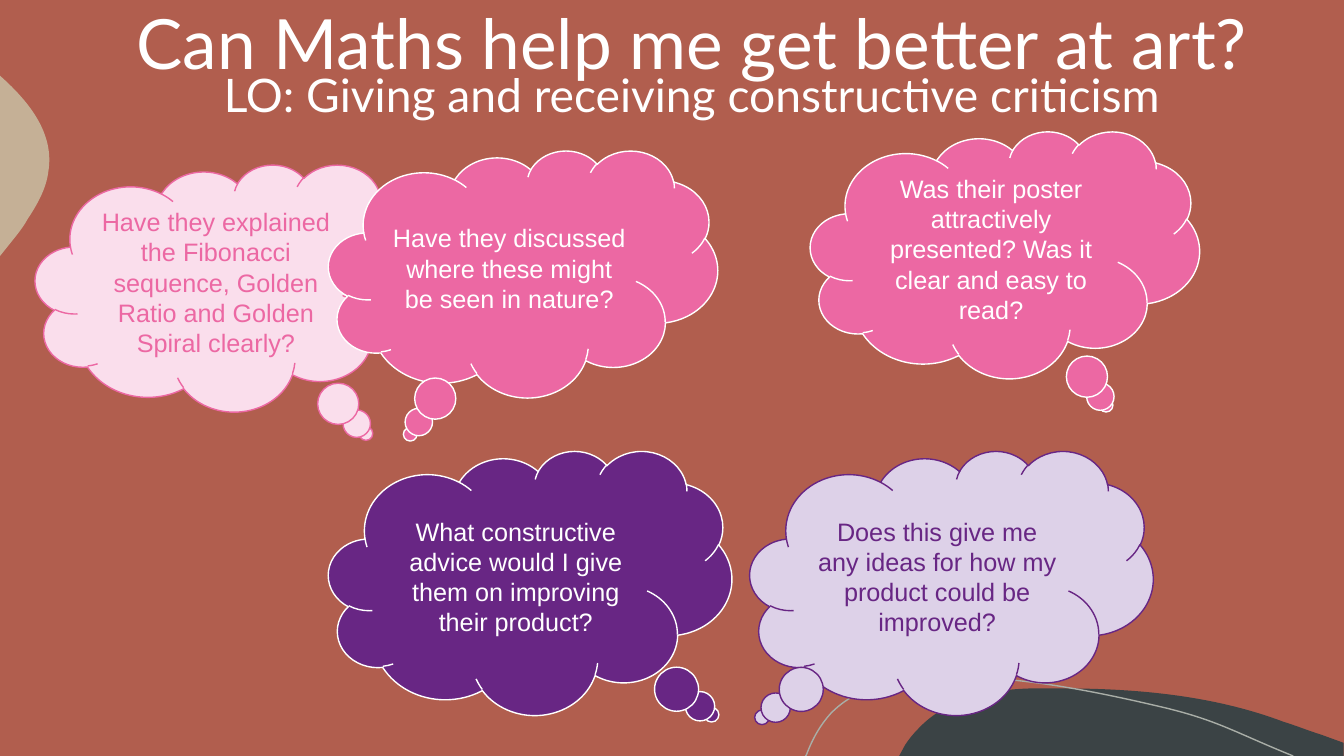
from dataclasses import dataclass

from lxml import etree
from pptx import Presentation
from pptx.dml.color import RGBColor
from pptx.enum.shapes import MSO_SHAPE
from pptx.enum.text import MSO_ANCHOR, MSO_AUTO_SIZE, PP_ALIGN
from pptx.oxml.ns import qn
from pptx.slide import Slide
from pptx.util import Inches, Pt

CLOUD = MSO_SHAPE.CLOUD_CALLOUT
MIDDLE, BOTTOM = MSO_ANCHOR.MIDDLE, MSO_ANCHOR.BOTTOM
NO_AUTOFIT = MSO_AUTO_SIZE.NONE
CENTER = PP_ALIGN.CENTER

COLUMNS, ROWS = 40 / 3, 7.5

Point = tuple[float, float]
Segment = tuple[Point, ...]


@dataclass(frozen=True)
class Theme:
    background: str = "B15E4E"
    slate: str = "3B4345"
    sand: str = "C5B096"
    grey: str = "A9AEA7"
    white: str = "FFFFFF"
    pink: str = "EC68A3"
    pale_pink: str = "FADEEC"
    purple: str = "682684"
    pale_purple: str = "DDD1E8"
    heading_font: str = "Lato"
    body_font: str = "Arial"
    heading_size: float = 49.5
    objective_size: float = 33
    question_size: float = 18
    line_width: float = 1


THEME = Theme()


@dataclass(frozen=True)
class CloudSize:
    columns: float
    rows: float


@dataclass(frozen=True)
class Question:
    text: str
    column: float
    row: float
    size: CloudSize
    tail: Point
    fill: str
    ink: str


@dataclass(frozen=True)
class Swirl:
    start: Point
    segments: tuple[Segment, ...]
    fill: str | None = None
    line: str | None = None


UPPER, LOWER = CloudSize(3.86, 2.45), CloudSize(4, 2.62)

QUESTIONS = (
    Question("Have they explained the Fibonacci sequence, Golden Ratio and Golden Spiral clearly?",
             0.35, 1.63, UPPER, (0.35, 0.59), THEME.pale_pink, THEME.pink),
    Question("Have they discussed where these might be seen in nature?",
             3.26, 1.49, UPPER, (-0.29, 0.65), THEME.pink, THEME.white),
    Question("Was their poster attractively presented? Was it clear and easy to read?",
             8.04, 1.3, UPPER, (0.26, 0.61), THEME.pink, THEME.white),
    Question("What constructive advice would I give them on improving their product?",
             3.26, 4.47, LOWER, (0.45, 0.5), THEME.purple, THEME.white),
    Question("Does this give me any ideas for how my product could be improved?",
             7.44, 4.47, LOWER, (-0.47, 0.51), THEME.pale_purple, THEME.purple),
)

SWIRLS = (
    Swirl((10.54, 6.83), (
        ((11.28, 6.83), (12.04, 6.9), (12.73, 7.16)),
        ((12.86, 7.2), (12.98, 7.25), (13.11, 7.29)),
        ((13.33, 7.37),), ((13.33, 7.5),), ((8.92, 7.5),), ((8.98, 7.39),),
        ((9.02, 7.33), (9.06, 7.28), (9.11, 7.23)),
        ((9.39, 6.93), (9.82, 6.84), (10.23, 6.83)),
        ((10.33, 6.83), (10.43, 6.83), (10.54, 6.83)),
    ), fill=THEME.slate),
    Swirl((0, 0.75), (
        ((0.01, 0.76),),
        ((0.3, 1.02), (0.54, 1.33), (0.48, 1.7)),
        ((0.46, 1.87), (0.37, 2.03), (0.27, 2.18)),
        ((0.24, 2.24), (0.17, 2.33), (0.08, 2.44)),
        ((0, 2.54),),
    ), fill=THEME.sand),
    Swirl((7.99, 7.5), (
        ((8, 7.49),),
        ((8.06, 7.33), (8.14, 7.19), (8.24, 7.08)),
        ((8.5, 6.81), (8.89, 6.73), (9.26, 6.72)),
        ((9.55, 6.72),),
        ((10.22, 6.72), (11, 6.89), (11.55, 7.02)),
        ((12.09, 7.15), (12.26, 7.27), (12.83, 7.5)),
    ), line=THEME.grey),
)

deck = Presentation()
deck.slide_width, deck.slide_height = Inches(COLUMNS), Inches(ROWS)


def across(columns: float) -> int:
    return round(deck.slide_width * columns / COLUMNS)


def down(rows: float) -> int:
    return round(deck.slide_height * rows / ROWS)


def rgb(colour: str) -> RGBColor:
    return RGBColor.from_string(colour)


def draw_swirl(slide: Slide, swirl: Swirl) -> None:
    builder = slide.shapes.build_freeform(across(swirl.start[0]), down(swirl.start[1]))
    ends = [segment[-1] for segment in swirl.segments]
    builder.add_line_segments([(across(x), down(y)) for x, y in ends],
                              close=swirl.fill is not None)
    ribbon = builder.convert_to_shape()
    edges = list(ribbon.element.iter(qn("a:lnTo")))
    for edge, segment in zip(edges, swirl.segments):
        if len(segment) == 3:
            edge.tag = qn("a:cubicBezTo")
            for index, (x, y) in enumerate(segment[:2]):
                handle = etree.Element(qn("a:pt"), x=str(across(x) - ribbon.left),
                                       y=str(down(y) - ribbon.top))
                edge.insert(index, handle)
    ribbon.shadow.inherit = False
    if swirl.fill:
        ribbon.fill.solid()
        ribbon.fill.fore_color.rgb = rgb(swirl.fill)
    else:
        ribbon.fill.background()
    if swirl.line:
        ribbon.line.color.rgb = rgb(swirl.line)
        ribbon.line.width = Pt(THEME.line_width)
    else:
        ribbon.line.fill.background()


def draw_question(slide: Slide, question: Question) -> None:
    cloud = slide.shapes.add_shape(CLOUD, across(question.column), down(question.row),
                                   across(question.size.columns), down(question.size.rows))
    cloud.adjustments[0], cloud.adjustments[1] = question.tail
    cloud.shadow.inherit = False
    cloud.fill.solid()
    cloud.fill.fore_color.rgb = rgb(question.fill)
    cloud.line.color.rgb = rgb(question.ink)
    cloud.line.width = Pt(THEME.line_width)
    cloud.text_frame.vertical_anchor = MIDDLE
    paragraph = cloud.text_frame.paragraphs[0]
    paragraph.text = question.text
    paragraph.alignment = CENTER
    paragraph.font.name = THEME.body_font
    paragraph.font.size = Pt(THEME.question_size)
    paragraph.font.color.rgb = rgb(question.ink)


def write_title(slide: Slide) -> None:
    title = slide.shapes.title
    title.left, title.top = across(1.03), down(-1.21)
    title.width, title.height = across(11.67), down(2.45)
    frame = title.text_frame
    frame.auto_size = NO_AUTOFIT
    frame.word_wrap = True
    frame.vertical_anchor = BOTTOM
    paragraph = frame.paragraphs[0]
    paragraph.alignment = CENTER
    paragraph.line_spacing = 0.7
    paragraph.font.name = THEME.heading_font
    paragraph.font.color.rgb = rgb(THEME.white)
    for text, size in (("Can Maths help me get better at art? ", THEME.heading_size),
                       ("LO: Giving and receiving constructive criticism", THEME.objective_size)):
        run = paragraph.add_run()
        run.text = text
        run.font.size = Pt(size)


def main() -> None:
    slide = deck.slides.add_slide(deck.slide_layouts.get_by_name("Title Only"))
    slide.background.fill.solid()
    slide.background.fill.fore_color.rgb = rgb(THEME.background)
    for swirl in SWIRLS:
        draw_swirl(slide, swirl)
    write_title(slide)
    for question in QUESTIONS:
        draw_question(slide, question)
    deck.save("out.pptx")


if __name__ == "__main__":
    main()
